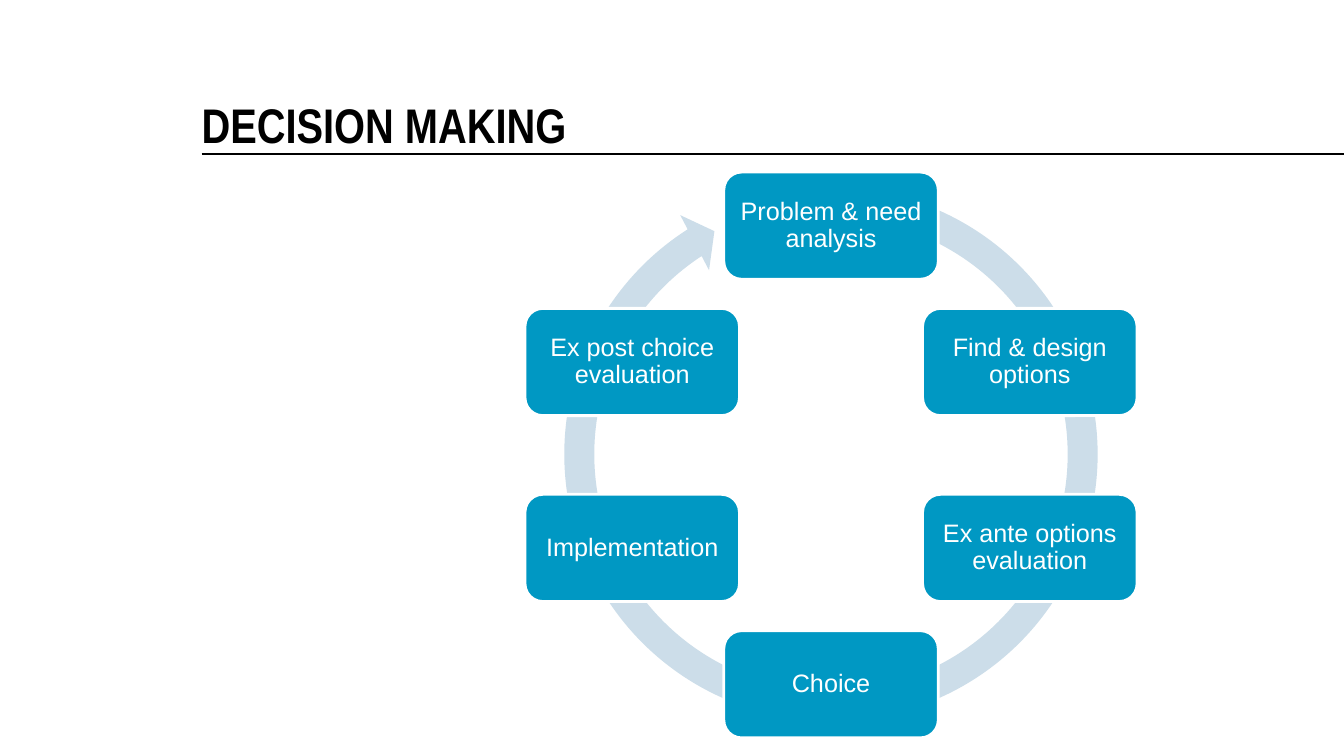
from lxml.etree import SubElement
from pptx import Presentation
from pptx.dml.color import RGBColor
from pptx.enum.shapes import MSO_CONNECTOR as Connector, MSO_SHAPE as Shape
from pptx.enum.text import MSO_ANCHOR as Anchor, MSO_AUTO_SIZE as AutoSize, PP_ALIGN as Align
from pptx.oxml.ns import qn
from pptx.util import Pt

BLACK = RGBColor(0x00, 0x00, 0x00)
WHITE = RGBColor(0xFF, 0xFF, 0xFF)
BLUE = RGBColor(0x00, 0x98, 0xC3)
PALE_BLUE = RGBColor(0xCC, 0xDD, 0xE9)

# Cycle geometry in points
CENTER_X, CENTER_Y = 593.6, 325
SIDE_X, SIDE_Y, END_Y = 142, 66.4, 163.8
BOX_WIDTH, BOX_HEIGHT = 153.2, 76.6
RING_SIZE = 404

# Steps clockwise from the top, with their offsets from the center
STEPS = [
    ("Problem & need analysis", 0, -END_Y),
    ("Find & design options", SIDE_X, -SIDE_Y),
    ("Ex ante options evaluation", SIDE_X, SIDE_Y),
    ("Choice", 0, END_Y),
    ("Implementation", -SIDE_X, SIDE_Y),
    ("Ex post choice evaluation", -SIDE_X, -SIDE_Y),
]


def write_text(frame, text, font="Arial", size=18, color=WHITE, bold=False,
               align=Align.CENTER, anchor=Anchor.MIDDLE, spacing=0.9, inset=5.4):
    frame.word_wrap = True
    frame.auto_size = AutoSize.NONE
    frame.vertical_anchor = anchor
    frame.margin_left = frame.margin_right = Pt(inset)
    frame.margin_top = frame.margin_bottom = Pt(inset)
    para = frame.paragraphs[0]
    para.alignment = align
    para.line_spacing = spacing
    para.space_before = Pt(0)
    span = para.add_run()
    span.text = text
    span.font.name = font
    span.font.size = Pt(size)
    span.font.bold = bold
    span.font.color.rgb = color


class CycleSlide:
    def __init__(self, deck):
        self.page = deck.slides.add_slide(deck.slide_layouts[5])
        self.shapes = self.page.shapes

    def title(self, text, left, top, width, height):
        box = self.shapes.title
        box.left, box.top, box.width, box.height = Pt(left), Pt(top), Pt(width), Pt(height)
        write_text(box.text_frame, text, font="Arial Narrow", size=34.7, color=BLACK, bold=True,
                   align=Align.LEFT, anchor=Anchor.BOTTOM, spacing=Pt(33.3), inset=0)

    def rule(self, left, right, y):
        line = self.shapes.add_connector(Connector.STRAIGHT, Pt(left), Pt(y), Pt(right), Pt(y))
        line.line.color.rgb = BLACK
        line.line.width = Pt(1)
        SubElement(line.element.spPr, qn("a:effectLst"))

    def shape(self, kind, center_x, center_y, width, height, fill):
        shape = self.shapes.add_shape(kind, Pt(center_x - width / 2), Pt(center_y - height / 2),
                                      Pt(width), Pt(height))
        shape.shadow.inherit = False
        shape.fill.solid()
        shape.fill.fore_color.rgb = fill
        return shape

    def ring(self, center_x, center_y, size):
        ring = self.shape(Shape.CIRCULAR_ARROW, center_x, center_y, size, size, PALE_BLUE)
        ring.line.fill.background()
        # Band width, head angle, end angle, start angle, head width
        for index, value in enumerate([0.053, 3.126, 142.321, 171.247, 0.055]):
            ring.adjustments[index] = value

    def step(self, text, center_x, center_y):
        box = self.shape(Shape.ROUNDED_RECTANGLE, center_x, center_y, BOX_WIDTH, BOX_HEIGHT, BLUE)
        box.line.color.rgb = WHITE
        box.line.width = Pt(2)
        write_text(box.text_frame, text)


def main():
    deck = Presentation()
    deck.slide_width, deck.slide_height = Pt(960), Pt(540)
    slide = CycleSlide(deck)

    # Heading
    slide.rule(144, 960, 110)
    slide.title("DECISION MAKING", 144, 52, 792, 57.6)

    # Ring with the steps on top
    slide.ring(CENTER_X, CENTER_Y - 0.5, RING_SIZE)
    for text, offset_x, offset_y in STEPS:
        slide.step(text, CENTER_X + offset_x, CENTER_Y + offset_y)

    deck.save("out.pptx")


if __name__ == "__main__":
    main()
